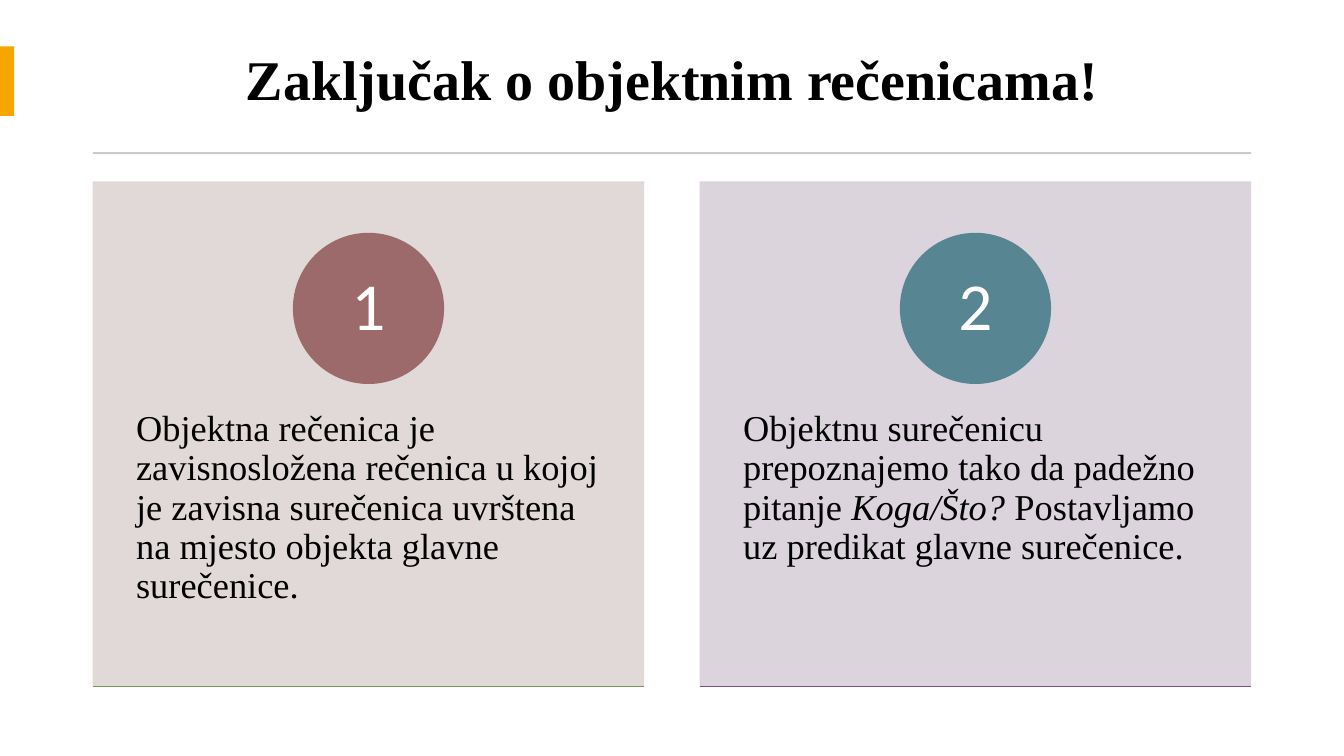
from dataclasses import dataclass

from lxml.etree import SubElement
from pptx import Presentation
from pptx.dml.color import RGBColor
from pptx.enum.shapes import MSO_CONNECTOR, MSO_SHAPE
from pptx.enum.text import MSO_ANCHOR, PP_ALIGN
from pptx.oxml.ns import qn
from pptx.util import Inches, Pt


@dataclass(frozen=True)
class Theme:
    serif: str = "Times New Roman"
    sans: str = "Calibri"
    head: int = 40
    body: int = 26
    digit: int = 48
    ink: str = "000000"
    white: str = "FFFFFF"
    accent: str = "F5A700"
    rule: str = "C9C9C9"


THEME = Theme()
LEFT, WIDTH = 0.92, 11.49
CARD_W, CARD_H, CARD_TOP = 5.47, 5.01, 1.8
DISC = 1.5

# Text runs, each with its italic flag; then card, disc and base colours
CARDS = [
    ([("Objektna rečenica je zavisnosložena rečenica u kojoj je zavisna "
       "surečenica uvrštena na mjesto objekta glavne surečenice.", False)],
     "DED4D4", "9C6A6A", "769860"),
    ([("Objektnu surečenicu prepoznajemo tako da padežno pitanje ", False),
      ("Koga/Što? ", True),
      ("Postavljamo uz predikat glavne surečenice.", False)],
     "D8D0DA", "578592", "824F8C"),
]


def color(code):
    return RGBColor.from_string(code)


def write(frame, runs, size, font=THEME.serif, ink=THEME.ink, bold=False,
          align=PP_ALIGN.LEFT, anchor=MSO_ANCHOR.TOP, pad=(0.1, 0.05)):
    """Fill a text frame with (text, italic) runs in one format."""
    frame.word_wrap = True
    frame.vertical_anchor = anchor
    frame.margin_left = frame.margin_right = Inches(pad[0])
    frame.margin_top = frame.margin_bottom = Inches(pad[1])
    para = frame.paragraphs[0]
    para.alignment = align
    para.line_spacing = 0.9
    for text, slant in runs:
        run = para.add_run()
        run.text = text
        run.font.name = font
        run.font.size = Pt(size)
        run.font.bold = bold
        run.font.italic = slant
        run.font.color.rgb = color(ink)


def block(slide, x, y, w, h, fill, kind=MSO_SHAPE.RECTANGLE, alpha=None):
    """Add a plain filled shape, optionally see-through (alpha in percent)."""
    shape = slide.shapes.add_shape(
        kind, Inches(x), Inches(y), Inches(w), Inches(h))
    shape.shadow.inherit = False
    shape.fill.solid()
    shape.fill.fore_color.rgb = color(fill)
    shape.line.fill.background()
    if alpha:
        tint = shape.fill._xPr.find(qn("a:solidFill"))[0]
        SubElement(tint, qn("a:alpha"), val=str(alpha * 1000))
    return shape


def base(slide, x, y, w, ink):
    """Draw the thin line under a card."""
    line = slide.shapes.add_connector(
        MSO_CONNECTOR.STRAIGHT, Inches(x), Inches(y), Inches(x + w), Inches(y))
    line.line.color.rgb = color(ink)
    line.line.width = Pt(1)
    SubElement(line._element.spPr, qn("a:effectLst"))


def heading(slide, text):
    title = slide.shapes.title
    title.left, title.top = Inches(LEFT), Inches(0.27)
    title.width, title.height = Inches(WIDTH), Inches(1.1)
    write(title.text_frame, [(text, False)], THEME.head, bold=True,
          align=PP_ALIGN.CENTER, anchor=MSO_ANCHOR.MIDDLE)


def card(slide, x, num, runs, fill, tone, edge):
    block(slide, x, CARD_TOP, CARD_W, CARD_H, fill, alpha=90)
    # Body text
    box = slide.shapes.add_textbox(
        Inches(x), Inches(3.71), Inches(CARD_W), Inches(3.01))
    write(box.text_frame, runs, THEME.body, pad=(0.43, 0.36))
    # Numbered disc, centred on the card
    disc = block(slide, x + (CARD_W - DISC) / 2, 2.31, DISC, DISC, tone,
                 kind=MSO_SHAPE.OVAL)
    write(disc.text_frame, [(str(num), False)], THEME.digit, font=THEME.sans,
          ink=THEME.white, align=PP_ALIGN.CENTER, anchor=MSO_ANCHOR.MIDDLE,
          pad=(0.12, 0.01))
    base(slide, x, CARD_TOP + CARD_H, CARD_W, edge)


def main():
    deck = Presentation()
    deck.slide_width, deck.slide_height = Inches(13.33), Inches(7.5)
    slide = deck.slides.add_slide(deck.slide_layouts[5])

    # Title with side accent and rule
    heading(slide, "Zaključak o objektnim rečenicama!")
    block(slide, 0, 0.46, 0.14, 0.69, THEME.accent)
    block(slide, LEFT, 1.51, WIDTH, 0.02, THEME.rule)

    # Cards, spread from the left to the right margin
    step = (WIDTH - CARD_W) / (len(CARDS) - 1)
    for i, item in enumerate(CARDS):
        card(slide, LEFT + i * step, i + 1, *item)

    deck.save("out.pptx")


if __name__ == "__main__":
    main()
